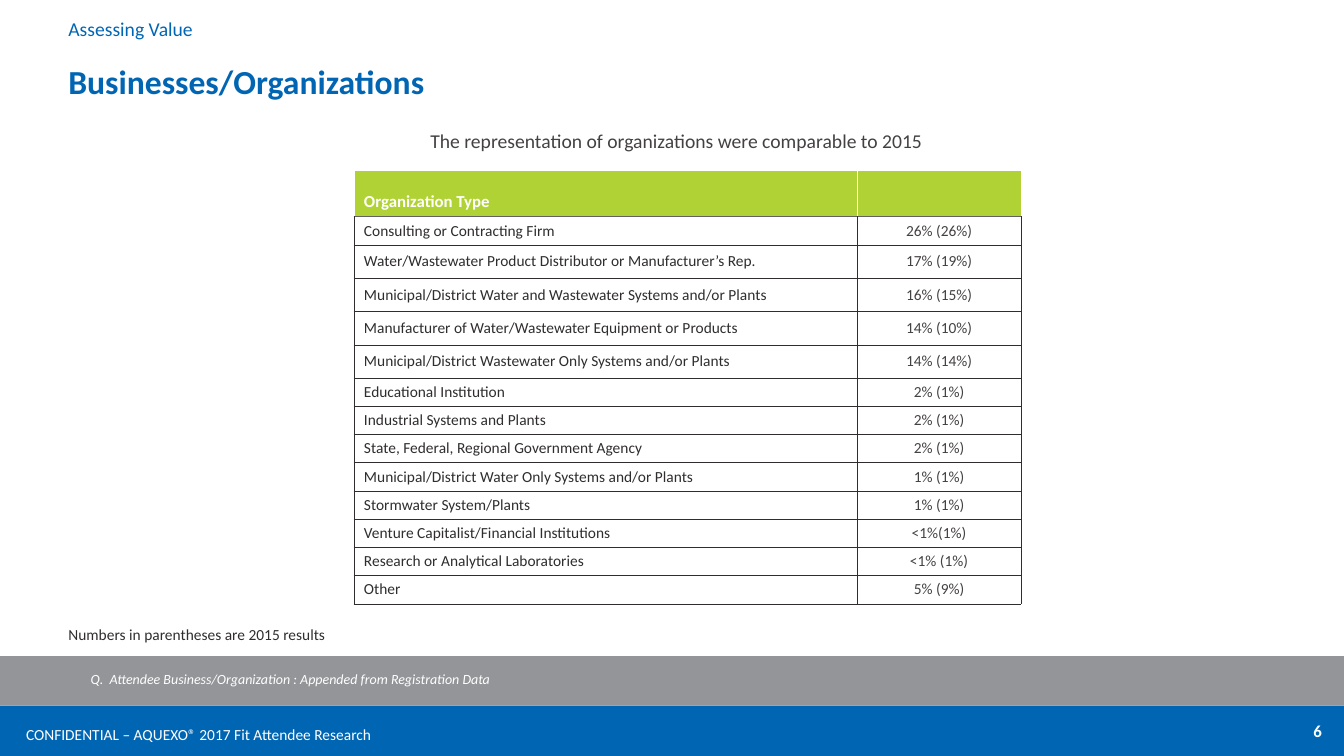
"""Build the Businesses/Organizations slide with its organization type table."""
from lxml.etree import SubElement
from pptx import Presentation
from pptx.dml.color import RGBColor
from pptx.enum.shapes import MSO_SHAPE
from pptx.enum.text import MSO_ANCHOR, PP_ALIGN
from pptx.oxml.ns import qn
from pptx.util import Inches, Pt

BLUE = RGBColor(0x00, 0x66, 0xB3)
GRAY = RGBColor(0x93, 0x95, 0x98)
GREEN = RGBColor(0xB0, 0xD2, 0x35)
WHITE = RGBColor(0xFF, 0xFF, 0xFF)
INK = RGBColor(0x2F, 0x2D, 0x2E)
CHARCOAL = RGBColor(0x44, 0x41, 0x43)
RULE = RGBColor(0x64, 0x60, 0x62)

SLIDE_WIDTH, SLIDE_HEIGHT = 13.33, 7.5
BANDS = [(7, 0.5, BLUE), (6.51, 0.49, GRAY)]

TEXTS = [
    ("CONFIDENTIAL – AQUEXO® 2017 Fit Attendee Research", (0.16, 7.14, 7.6, 0.29),
     {"size": Pt(11), "color": WHITE}, {}),
    ("6", (10.21, 7.1, 3, 0.4),
     {"size": Pt(12), "color": WHITE, "bold": True}, {"alignment": PP_ALIGN.RIGHT}),
    ("The representation of organizations were comparable to 2015", (4.17, 1.11, 5.3, 0.42),
     {"size": Pt(14), "color": CHARCOAL}, {"line_spacing": 1.5}),
    ("Q.  Attendee Business/Organization : Appended from Registration Data",
     (0.8, 6.6, 11.27, 0.17), {"size": Pt(10), "color": WHITE, "italic": True}, {}),
    ("Businesses/Organizations", (0.58, 0.58, 11.15, 0.49),
     {"size": Pt(24), "color": BLUE, "bold": True}, {"line_spacing": 0.9}),
    ("Assessing Value", (0.58, 0.12, 3.05, 0.34), {"size": Pt(14), "color": BLUE}, {}),
    ("Numbers in parentheses are 2015 results", (0.58, 6.15, 2.83, 0.29),
     {"size": Pt(11), "color": INK}, {}),
]

HEADER = ("Organization Type", "")
ORGANIZATIONS = [
    ("Consulting or Contracting Firm", "26% (26%)"),
    ("Water/Wastewater Product Distributor or Manufacturer’s Rep.", "17% (19%)"),
    ("Municipal/District Water and Wastewater Systems and/or Plants", "16% (15%)"),
    ("Manufacturer of Water/Wastewater Equipment or Products", "14% (10%)"),
    ("Municipal/District Wastewater Only Systems and/or Plants", "14% (14%)"),
    ("Educational Institution", "2% (1%)"),
    ("Industrial Systems and Plants", "2% (1%)"),
    ("State, Federal, Regional Government Agency", "2% (1%)"),
    ("Municipal/District Water Only Systems and/or Plants", "1% (1%)"),
    ("Stormwater System/Plants", "1% (1%)"),
    ("Venture Capitalist/Financial Institutions", "<1%(1%)"),
    ("Research or Analytical Laboratories", "<1% (1%)"),
    ("Other", "5% (9%)"),
]
TABLE_LEFT, TABLE_TOP = 3.51, 1.69
COLUMN_WIDTHS = (4.99, 1.63)
HEADER_HEIGHT, TALL_HEIGHT, ROW_HEIGHT = 0.46, 0.33, 0.28
TALL_ROWS = range(2, 6)


def write(para, text, font, layout):
    """Put one formatted run into a paragraph."""
    for name, value in layout.items():
        setattr(para, name, value)
    span = para.add_run()
    span.text = text
    for name, value in {"name": "Calibri", **font}.items():
        if name == "color":
            span.font.color.rgb = value
        else:
            setattr(span.font, name, value)


def add_text(page, text, place, font, layout):
    """Add a wrapped text box."""
    box = page.shapes.add_textbox(*map(Inches, place))
    box.text_frame.word_wrap = True
    if text == "Businesses/Organizations":
        box.text_frame.vertical_anchor = MSO_ANCHOR.MIDDLE
    write(box.text_frame.paragraphs[0], text, font, layout)


def add_band(page, top, height, color):
    """Add a full-width footer band."""
    band = page.shapes.add_shape(MSO_SHAPE.RECTANGLE, 0, Inches(top),
                                 Inches(SLIDE_WIDTH), Inches(height))
    band.shadow.inherit = False
    band.fill.solid()
    band.fill.fore_color.rgb = color
    band.line.fill.background()


def set_borders(cell, borders):
    """Draw cell borders, given as (color, points) by side."""
    properties = cell._tc.get_or_add_tcPr()
    for index, side in enumerate("LRTB"):
        color, points = borders[side]
        line = SubElement(properties, qn(f"a:ln{side}"), w=str(Pt(points)))
        fill = SubElement(line, qn("a:solidFill"))
        SubElement(fill, qn("a:srgbClr"), val=str(color))
        properties.insert(index, line)


def format_cell(cell, row, column, text):
    """Fill and style one table cell."""
    para = cell.text_frame.paragraphs[0]
    if row == 0:
        cell.vertical_anchor = MSO_ANCHOR.BOTTOM
        fill, borders = GREEN, dict.fromkeys("LRT", (WHITE, 0.5)) | {"B": (RULE, 0.5)}
        font, layout = {"size": Pt(12), "color": WHITE, "bold": True}, {}
    else:
        cell.vertical_anchor = MSO_ANCHOR.MIDDLE
        for side in ("left", "right", "top", "bottom"):
            setattr(cell, f"margin_{side}", 0)
        borders = dict.fromkeys("LRTB", (INK, 0.25))
        if row == 1:
            borders["T"] = (RULE, 0.5)
        if column == 0:
            cell.margin_left = Inches(0.1)
            fill, color, layout = None, INK, {}
        else:
            fill, color, layout = WHITE, CHARCOAL, {"alignment": PP_ALIGN.CENTER}
        font = {"size": Pt(11), "color": color, "bold": False}
    if fill is None:
        cell.fill.background()
    else:
        cell.fill.solid()
        cell.fill.fore_color.rgb = fill
    set_borders(cell, borders)
    if text:
        write(para, text, font, layout)


def add_organization_table(page):
    """Add the table of organization types and shares."""
    rows = [HEADER] + ORGANIZATIONS
    heights = [HEADER_HEIGHT if row == 0 else TALL_HEIGHT if row in TALL_ROWS else ROW_HEIGHT
               for row in range(len(rows))]
    table = page.shapes.add_table(
        len(rows), len(COLUMN_WIDTHS), Inches(TABLE_LEFT), Inches(TABLE_TOP),
        Inches(sum(COLUMN_WIDTHS)), Inches(sum(heights))).table
    table.horz_banding = False
    for column, width in zip(table.columns, COLUMN_WIDTHS):
        column.width = Inches(width)
    for row, (texts, height) in enumerate(zip(rows, heights)):
        table.rows[row].height = Inches(height)
        for column, text in enumerate(texts):
            format_cell(table.cell(row, column), row, column, text)


def main():
    deck = Presentation()
    deck.slide_width, deck.slide_height = Inches(SLIDE_WIDTH), Inches(SLIDE_HEIGHT)
    page = deck.slides.add_slide(deck.slide_layouts[6])
    for band in BANDS:
        add_band(page, *band)
    add_organization_table(page)
    for entry in TEXTS:
        add_text(page, *entry)
    deck.save("out.pptx")


if __name__ == "__main__":
    main()
